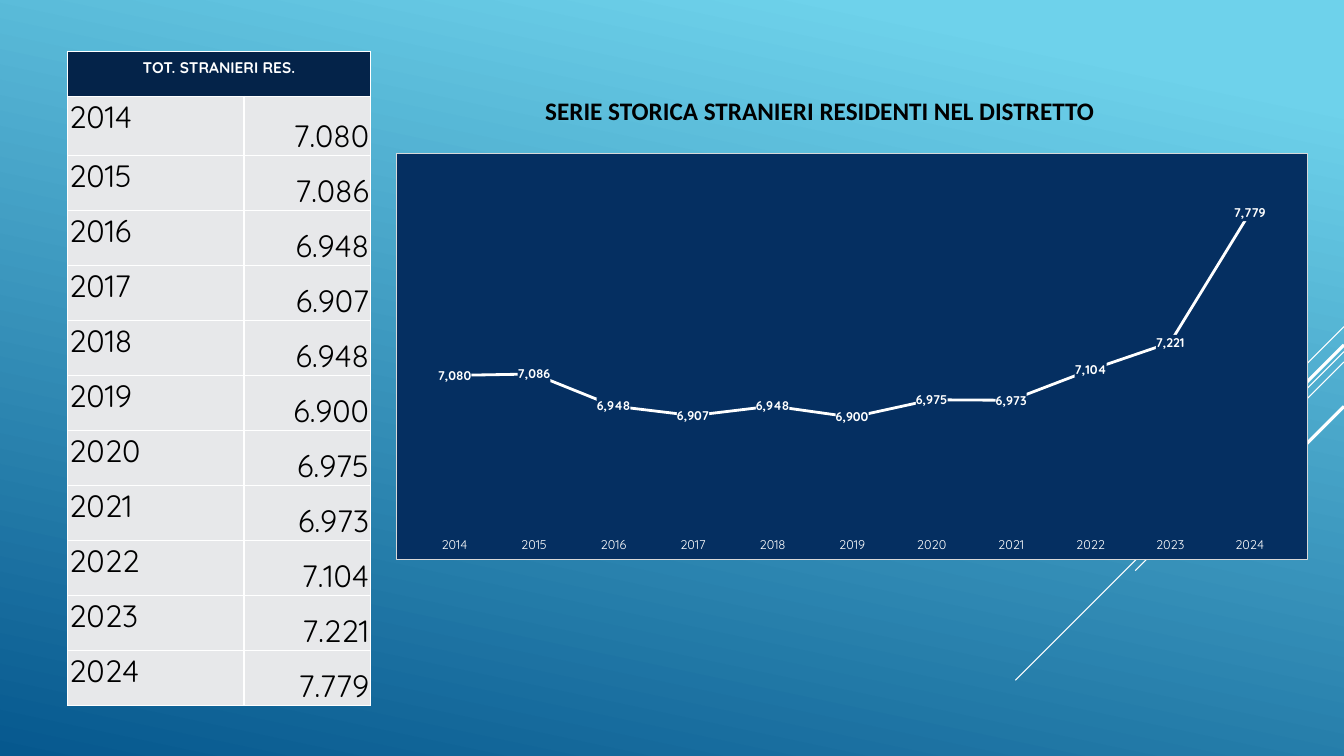
from lxml import etree
from pptx import Presentation
from pptx.chart.data import CategoryChartData
from pptx.dml.color import RGBColor
from pptx.enum.chart import XL_CHART_TYPE as CT, XL_LABEL_POSITION as LP, XL_TICK_MARK as TM
from pptx.enum.shapes import MSO_CONNECTOR
from pptx.enum.text import MSO_ANCHOR as MA, PP_ALIGN as PA
from pptx.oxml import parse_xml
from pptx.oxml.ns import nsdecls, qn
from pptx.util import Cm, Pt

# Content
TITLE = "SERIE STORICA STRANIERI RESIDENTI NEL DISTRETTO"
TABLE_HEAD = "TOT. STRANIERI RES."
RESIDENTS = {
    "2014": 7080, "2015": 7086, "2016": 6948, "2017": 6907,
    "2018": 6948, "2019": 6900, "2020": 6975, "2021": 6973,
    "2022": 7104, "2023": 7221, "2024": 7779,
}
# Diagonals falling from the right edge: start height, run (cm), width (pt)
DIAGONALS = [(8.23, 2.54, 0.75), (8.86, 8.28, 0.75), (9.12, 5.26, 0.75),
             (8.69, 4.85, 2.25), (10.24, 3.53, 2.25)]
FONT = "Quicksand"
WHITE, BLACK, NAVY, HEAD, CELL = "FFFFFF", "000000", "052F61", "042349", "E7E8EA"
WIDTH, HEIGHT = 33.87, 19.05


def rgb(hex_color):
    return RGBColor.from_string(hex_color)


def style(font, size, color, bold=False, name=FONT):
    font.name, font.size, font.bold = name, Pt(size), bold
    font.color.rgb = rgb(color)


def solid(fill, color):
    fill.solid()
    fill.fore_color.rgb = rgb(color)


def fill_cell(cell, text, size, color, back, align, anchor, bold=False, bottom=0.0):
    cell.text = text
    p = cell.text_frame.paragraphs[0]
    p.alignment = align
    style(p.runs[0].font, size, color, bold)
    cell.vertical_anchor = anchor
    cell.margin_left = cell.margin_right = cell.margin_top = Cm(0.03)
    cell.margin_bottom = Cm(bottom)
    solid(cell.fill, back)


def add_borders(cell):
    tcPr = cell._tc.get_or_add_tcPr()
    for i, side in enumerate(("lnL", "lnR", "lnT", "lnB")):
        tcPr.insert(i, parse_xml(
            f'<a:{side} {nsdecls("a")} w="12700"><a:solidFill>'
            f'<a:srgbClr val="{WHITE}"/></a:solidFill></a:{side}>'))


def chart_box(fill, line=None):
    border = (f'<a:ln w="9525"><a:solidFill><a:srgbClr val="{line}"/></a:solidFill></a:ln>'
              if line else "")
    return parse_xml(f'<c:spPr {nsdecls("c", "a")}><a:solidFill><a:srgbClr val="{fill}"/>'
                     f'</a:solidFill>{border}</c:spPr>')


prs = Presentation()
prs.slide_width, prs.slide_height = Cm(WIDTH), Cm(HEIGHT)
s = prs.slides.add_slide(prs.slide_layouts[6])

# Background
bg = s.background.fill
bg.gradient()
bg.gradient_angle = 360 - 102
for stop, (position, color) in zip(bg.gradient_stops, [(0.1, "6ED2EB"), (1, "06588E")]):
    stop.position = position
    stop.color.rgb = rgb(color)

# Diagonal lines
for top, run, width in DIAGONALS:
    line = s.shapes.add_connector(MSO_CONNECTOR.STRAIGHT, Cm(WIDTH), Cm(top),
                                  Cm(WIDTH - run), Cm(top + run))
    line.line.color.rgb = rgb(WHITE)
    line.line.width = Pt(width)
    etree.SubElement(line._element.spPr, qn("a:effectLst"))

# Table
head_h, first_h, row_h = 1.14, 1.49, 1.385
n = len(RESIDENTS)
table_h = head_h + first_h + row_h * (n - 1)
table = s.shapes.add_table(n + 1, 2, Cm(1.71), Cm(1.29), Cm(7.62), Cm(table_h)).table
table.horz_banding = False
for col, w in zip(table.columns, (4.44, 3.18)):
    col.width = Cm(w)
for row, h in zip(table.rows, [head_h, first_h] + [row_h] * (n - 1)):
    row.height = Cm(h)
table.cell(0, 0).merge(table.cell(0, 1))
fill_cell(table.cell(0, 0), TABLE_HEAD, 11, WHITE, HEAD, PA.CENTER, MA.BOTTOM, True, 0.48)
for i, (year, value) in enumerate(RESIDENTS.items(), 1):
    number = f"{value:,}".replace(",", ".")
    fill_cell(table.cell(i, 0), year, 22, BLACK, CELL, PA.LEFT, MA.TOP)
    fill_cell(table.cell(i, 1), number, 22, BLACK, CELL, PA.RIGHT, MA.BOTTOM)
for cell in table.iter_cells():
    add_borders(cell)

# Line chart
data = CategoryChartData(number_format="#,##0")
data.categories = list(RESIDENTS)
data.add_series("Series 1", list(RESIDENTS.values()))
chart = s.shapes.add_chart(CT.LINE, Cm(9.98), Cm(3.86), Cm(22.99), Cm(10.26), data).chart
chart.has_legend = chart.has_title = False
style(chart.font, 10, WHITE)
chart._chartSpace.chart.addnext(chart_box(NAVY, "D9D9D9"))

years = chart.category_axis
years.major_tick_mark = years.minor_tick_mark = TM.NONE
years.format.line.fill.background()
style(years.tick_labels.font, 9, WHITE)
values = chart.value_axis
values.minimum_scale, values.maximum_scale = 6400, 8000
values.has_major_gridlines = False
values.visible = False

series = chart.plots[0].series[0]
series.smooth = False
series.format.line.color.rgb = rgb(WHITE)
series.format.line.width = Pt(2)
labels = series.data_labels
labels.show_value = True
labels.number_format, labels.number_format_is_linked = "#,##0", False
labels.position = LP.CENTER
style(labels.font, 9, WHITE, True)
# Label boxes in the chart colour interrupt the line
labels._element.find(qn("c:txPr")).addprevious(chart_box(NAVY))

# Plot area as shares of the chart
plot_area = chart._chartSpace.chart.plotArea
for old in plot_area.findall(qn("c:layout")):
    plot_area.remove(old)
share = {"x": 0.02, "y": 0.02, "w": 0.96, "h": 0.915}
plot_area.insert(0, parse_xml(
    f'<c:layout {nsdecls("c")}><c:manualLayout><c:layoutTarget val="inner"/>'
    '<c:xMode val="edge"/><c:yMode val="edge"/>'
    + "".join(f'<c:{k} val="{v}"/>' for k, v in share.items())
    + "</c:manualLayout></c:layout>"))

# Chart heading
tf = s.shapes.add_textbox(Cm(13.49), Cm(2.29), Cm(16.94), Cm(1.03)).text_frame
tf.word_wrap = True
tf.text = TITLE
style(tf.paragraphs[0].runs[0].font, 18, BLACK, True, "Calibri")

prs.save("out.pptx")
